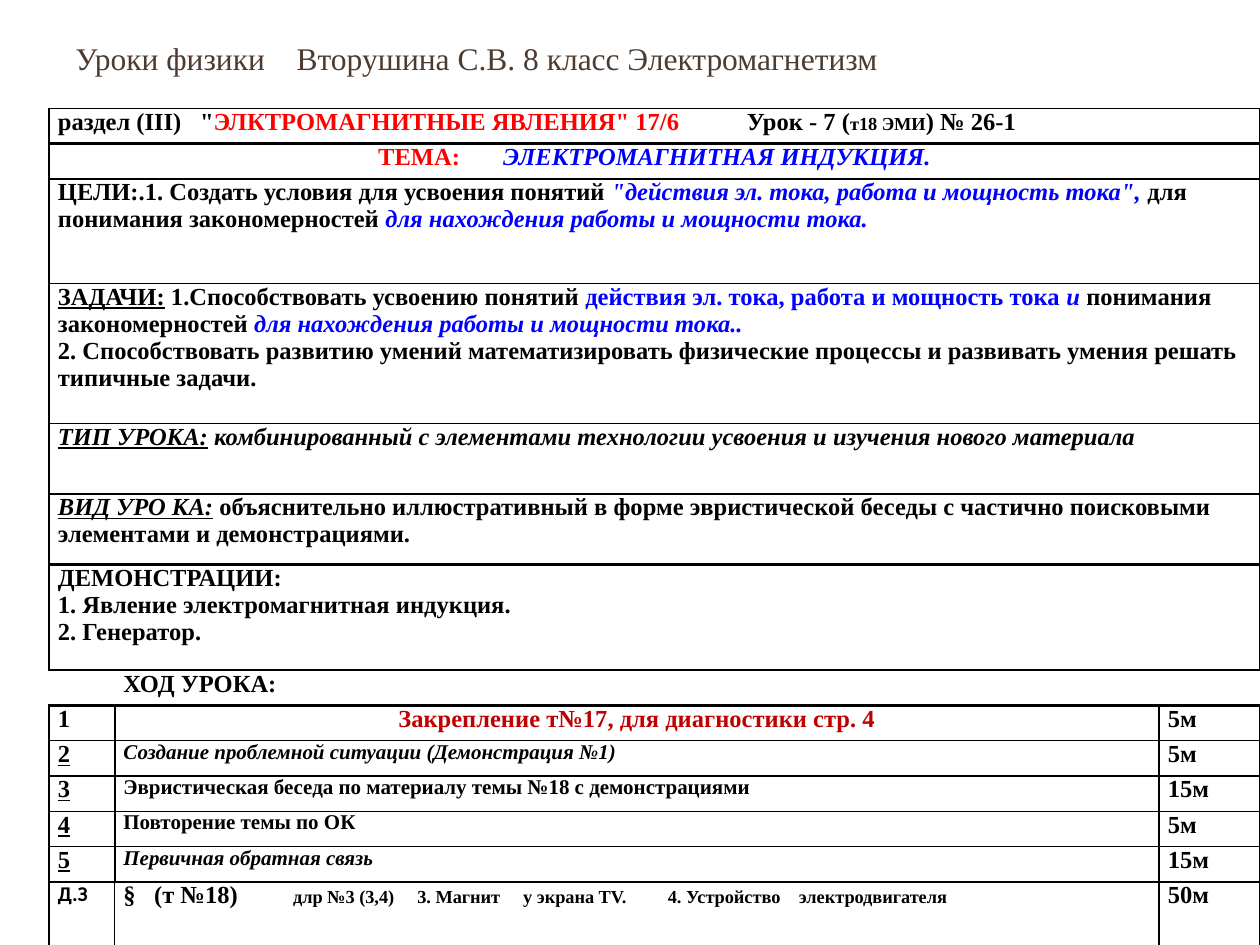
import pptx
import pptx.dml.color
import pptx.enum.text
import pptx.oxml.ns
import pptx.util
from lxml import etree

Inches = pptx.util.Inches
Pt = pptx.util.Pt
ALIGN = pptx.enum.text.PP_ALIGN
BLACK, RED, DARK, BLUE, BROWN = "000000", "FF0000", "C00000", "0000FF", "4E3B30"


def paint(code):
    return pptx.dml.color.RGBColor.from_string(code)


def part(text, color=BLACK, marks="b", size=14, face="Times New Roman", gap=0):
    """One run; marks holds b, i, u; gap is the width of a space, in spaces."""
    return dict(text=text, color=color, marks=marks, size=size, face=face, gap=gap)


def space(count, size=14, marks="b"):
    return part(" ", size=size, marks=marks, gap=count)


class Deck:
    def __init__(self, width, height):
        self.show = pptx.Presentation()
        self.show.slide_width = Inches(width)
        self.show.slide_height = Inches(height)
        self.slide = self.show.slides.add_slide(self.show.slide_layouts[6])

    def fill_text(self, frame, lines, align=ALIGN.LEFT):
        for num, line in enumerate(lines):
            para = frame.add_paragraph() if num else frame.paragraphs[0]
            para.alignment = align
            for item in line:
                run = para.add_run()
                run.text = item["text"]
                font = run.font
                font.name = item["face"]
                font.size = Pt(item["size"])
                font.bold = "b" in item["marks"]
                font.italic = "i" in item["marks"]
                font.underline = "u" in item["marks"]
                font.color.rgb = paint(item["color"])
                if item["gap"]:
                    extra = (item["gap"] - 1) * item["size"] * 25
                    font._rPr.set("spc", str(int(extra)))

    def text(self, left, top, width, height, line):
        box = self.slide.shapes.add_textbox(*map(Inches, (left, top, width, height)))
        frame = box.text_frame
        frame.word_wrap = True
        frame.vertical_anchor = pptx.enum.text.MSO_ANCHOR.MIDDLE
        self.fill_text(frame, [line])

    def table(self, left, top, cols, rows):
        area = map(Inches, (left, top, sum(cols), sum(rows)))
        grid = self.slide.shapes.add_table(len(rows), len(cols), *area).table
        grid.first_row = grid.horz_banding = False
        for col, width in zip(grid.columns, cols):
            col.width = Inches(width)
        for row, height in zip(grid.rows, rows):
            row.height = Inches(height)
        return grid

    def cell(self, cell, lines, edges, align=ALIGN.LEFT):
        cell.margin_left = cell.margin_right = Inches(0.07)
        cell.margin_top = cell.margin_bottom = 0
        qn = pptx.oxml.ns.qn
        props = cell._tc.get_or_add_tcPr()
        for side, weight in zip("LRTB", edges):
            line = etree.SubElement(props, qn("a:ln" + side), w=str(int(Pt(weight))))
            if weight:
                fill = etree.SubElement(line, qn("a:solidFill"))
                etree.SubElement(fill, qn("a:srgbClr"), val=BLACK)
            else:
                etree.SubElement(line, qn("a:noFill"))
        cell.fill.solid()
        cell.fill.fore_color.rgb = paint("FFFFFF")
        self.fill_text(cell.text_frame, lines, align)
        if not lines:
            para = cell.text_frame.paragraphs[0]._p
            etree.SubElement(para, qn("a:endParaRPr"), sz="1400")


# Full-width rows of the lesson plan
PLAN = [
    [[part("раздел (III)"), space(3), part('"'),
      part('ЭЛКТРОМАГНИТНЫЕ ЯВЛЕНИЯ" 17/6', RED), space(11),
      part("Урок - 7 ("), part("т18 ЭМИ", size=10.5), part(") № 26-1")]],
    [[part("ТЕМА:", RED), space(7),
      part("ЭЛЕКТРОМАГНИТНАЯ ИНДУКЦИЯ.", BLUE, "bi")]],
    [[part("ЦЕЛИ:.1. Создать условия для усвоения понятий "),
      part('"действия эл. тока, работа и мощность тока", ', BLUE, "bi"),
      part("для понимания закономерностей "),
      part("для нахождения работы и мощности тока.", BLUE, "bi")]],
    [[part("ЗАДАЧИ:", marks="bu"), part(" 1.Способствовать усвоению понятий "),
      part("действия эл. тока, работа и мощность тока", BLUE),
      part(" и ", BLUE, "bi"), part("понимания закономерностей"),
      part(" для нахождения работы и мощности тока..", BLUE, "bi")],
     [part("2. Способствовать развитию умений математизировать физические "
           "процессы и развивать умения решать типичные задачи.")]],
    [[part("ТИП УРОКА:", marks="biu"),
      part(" комбинированный с элементами технологии усвоения и изучения "
           "нового материала", marks="bi")]],
    [[part("ВИД УРО КА:", marks="biu"),
      part(" объяснительно иллюстративный в форме эвристической беседы "
           "с частично поисковыми элементами и демонстрациями.")]],
    [[part("ДЕМОНСТРАЦИИ:")],
     [part("1. Явление электромагнитная индукция.")],
     [part("2. Генератор.")]],
]

# Steps of the lesson: number, content, time
STEPS = [
    [part("1")], [part("Закрепление т№17, для диагностики стр. 4", DARK)], "5м",
    [part("2", marks="bu")],
    [part("Создание проблемной ситуации (Демонстрация №1)", marks="bi", size=12)], "5м",
    [part("3", marks="bu")],
    [part("Эвристическая беседа по материалу темы №18 с демонстрациями", size=12)], "15м",
    [part("4", marks="bu")], [part("Повторение темы по ОК", size=12)], "5м",
    [part("5", marks="bu")],
    [part("Первичная обратная связь", marks="bi", size=12)], "15м",
    [part("Д.З", size=12, face="Calibri")],
    [part("§"), space(3), part("(т №18)"), space(9),
     part("длр №3 (3,4)", size=10.5), space(5, 10.5),
     part("3. Магнит", size=10.5), space(5, 10.5),
     part("у экрана TV.", size=10.5), space(9, 10.5),
     part("4. Устройство", size=10.5), space(4, 10.5),
     part("электродвигателя", size=10.5)], "50м",
]

COLS = [0.52, 8.29, 0.8]
ROWS = [0.28, 0.28, 0.83, 1.11, 0.56, 0.56, 0.84] + [0.28] * 6 + [0.51]
RULES = [1, 1.5, 1.5, 1, 1, 1, 1.5, 1.5, 1.5, 1, 1, 1, 1, 1.5, 1.5]


def main():
    deck = Deck(10, 7.5)

    # Title
    deck.text(0.5, 0, 9.5, 0.92, [
        part("Уроки физики", BROWN, "", 18), space(4, 18, ""),
        part("Вторушина С.В. 8 класс Электромагнетизм", BROWN, "", 18)])

    # Plan
    grid = deck.table(0.39, 0.86, COLS, ROWS)
    for row, lines in enumerate(PLAN):
        side = 1.5 if row in (1, 6) else 1
        edges = (side, side, RULES[row], RULES[row + 1])
        grid.cell(row, 0).merge(grid.cell(row, 2))
        for col in range(3):
            align = ALIGN.CENTER if row == 1 else ALIGN.LEFT
            deck.cell(grid.cell(row, col), [] if col else lines, edges, align)

    # Heading between the two parts
    head = len(PLAN)
    for col in range(3):
        lines = [[part("ХОД УРОКА:")]] if col == 1 else []
        deck.cell(grid.cell(head, col), lines, (0, 0, 1.5, 1.5))

    # Steps
    last = len(ROWS) - 1
    for num, item in enumerate(STEPS):
        row, col = head + 1 + num // 3, num % 3
        bars = [1.5, 1, 1, 1.5] if row == last else [1.5, 1.5, 1, 1]
        line = [part(item)] if col == 2 else item
        align = ALIGN.CENTER if num == 1 else ALIGN.LEFT
        deck.cell(grid.cell(row, col), [line],
                  (bars[col], bars[col + 1], RULES[row], RULES[row + 1]), align)

    deck.show.save("out.pptx")


if __name__ == "__main__":
    main()
